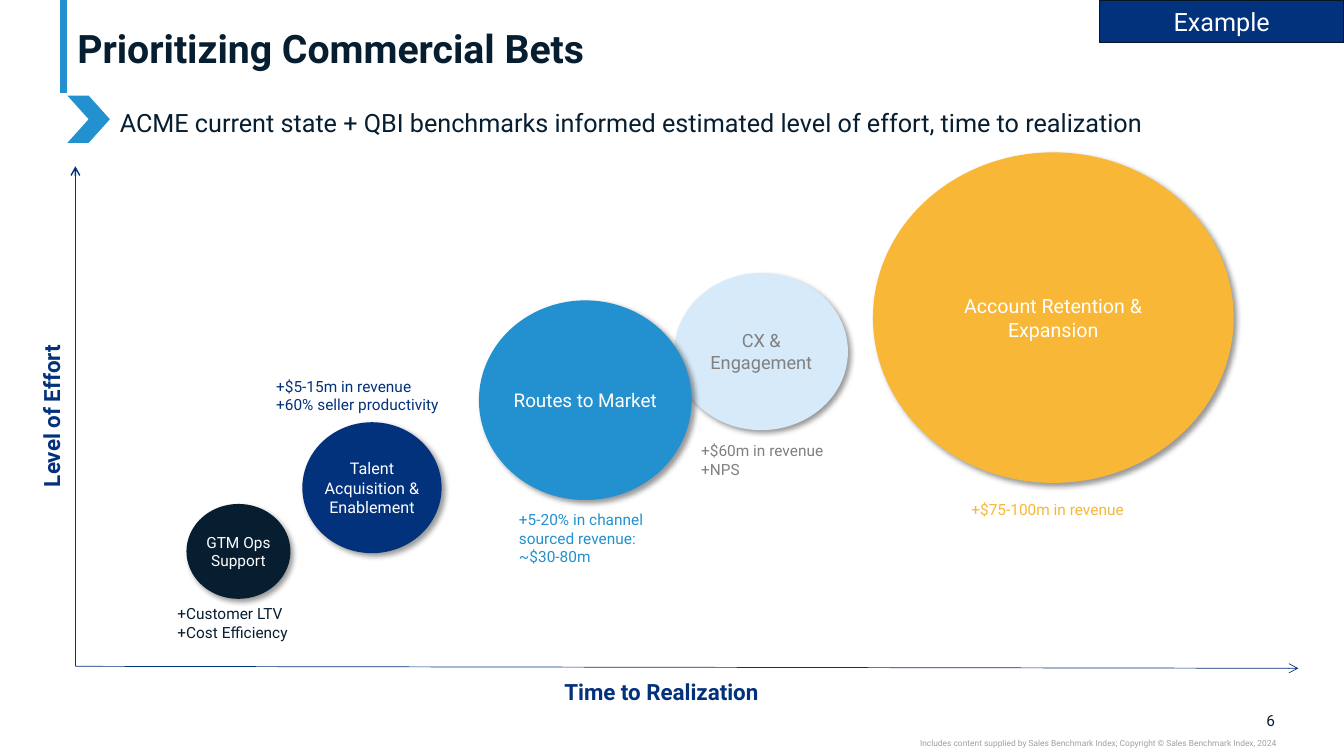
"""Build a slide that plots commercial bets by effort and time to realization."""
from lxml.etree import SubElement
from pptx import Presentation
from pptx.dml.color import RGBColor
from pptx.enum.shapes import MSO_CONNECTOR, MSO_SHAPE
from pptx.enum.text import MSO_ANCHOR, PP_ALIGN
from pptx.oxml.ns import qn
from pptx.util import Cm, Pt

FONT = "Roboto"
COLORS = {
    "ink": "071E31", "navy": "03327C", "blue": "2391CF", "pale": "D7EAF9",
    "amber": "F8B737", "gray": "808080", "light_gray": "A0A0A0",
    "edge": "051624", "white": "FFFFFF", "black": "000000",
}
BETS = [
    ("GTM Ops Support", (4.7, 12.7, 2.62, 2.39), "ink", "white", 11,
     "+Customer LTV\n+Cost Efficiency", (4.22, 15.11, 5.44, 1.19), "ink"),
    ("Talent Acquisition & Enablement", (7.62, 10.64, 3.51, 3.3), "navy", "white", 11.5,
     "+$5-15m in revenue\n+60% seller productivity", (6.71, 9.37, 5.13, 1.19), "navy"),
    ("CX & Engagement", (17, 6.88, 4.37, 3.96), "pale", "gray", 13,
     "+$60m in revenue\n+NPS", (17.42, 11, 4.37, 1.19), "gray"),
    ("Routes to Market", (12.07, 7.57, 5.36, 5.03), "blue", "white", 13.5,
     "+5-20% in channel sourced revenue: ~$30-80m", (12.83, 12.73, 4.37, 1.68), "blue"),
    ("Account Retention & Expansion", (22, 3.84, 9.09, 8.33), "amber", "white", 14,
     "+$75-100m in revenue", (24.23, 12.47, 4.72, 0.74), "amber"),
]


def color(name):
    """Return the named colour."""
    return RGBColor.from_string(COLORS[name])


def lengths(numbers):
    """Turn plain numbers into centimetre lengths."""
    return [Cm(number) for number in numbers]


def write(shape, text, size, ink, align=PP_ALIGN.LEFT, bold=False, anchor=MSO_ANCHOR.TOP, inset=True):
    """Put formatted text into a shape."""
    frame = shape.text_frame
    frame.word_wrap = True
    frame.vertical_anchor = anchor
    if not inset:
        frame.margin_left = frame.margin_right = frame.margin_top = frame.margin_bottom = 0
    frame.text = text
    for para in frame.paragraphs:
        para.alignment = align
        for span in para.runs:
            span.font.name = FONT
            span.font.size = Pt(size)
            span.font.bold = bold
            span.font.color.rgb = color(ink)


def add_text(page, place, text, size, ink, **style):
    """Add a text box."""
    box = page.shapes.add_textbox(*lengths(place))
    write(box, text, size, ink, **style)
    return box


def add_block(page, kind, place, fill):
    """Add a plain filled shape without outline or shadow."""
    block = page.shapes.add_shape(kind, *lengths(place))
    block.shadow.inherit = False
    block.fill.solid()
    block.fill.fore_color.rgb = color(fill)
    block.line.fill.background()
    return block


def add_shadow(shape):
    """Give a shape a soft shadow to the lower right."""
    effects = shape._element.spPr.find(qn("a:effectLst"))
    shadow = SubElement(effects, qn("a:outerShdw"), blurRad=str(Pt(4)), dist=str(Pt(3)),
                        dir=str(45 * 60000), algn="tl", rotWithShape="0")
    tone = SubElement(shadow, qn("a:srgbClr"), val=COLORS["black"])
    SubElement(tone, qn("a:alpha"), val="40000")


def add_line(page, ends, ink, width, arrow=False):
    """Add a straight line, with an arrowhead at its end if asked."""
    line = page.shapes.add_connector(MSO_CONNECTOR.STRAIGHT, *lengths(ends))
    line.line.color.rgb = color(ink)
    line.line.width = Pt(width)
    if arrow:
        SubElement(line.line._get_or_add_ln(), qn("a:tailEnd"), type="arrow")
    SubElement(line._element.spPr, qn("a:effectLst"))


def add_bet(page, name, place, fill, ink, size, note, note_place, note_ink):
    """Add a bubble and the note on its benefit."""
    bubble = add_block(page, MSO_SHAPE.OVAL, place, fill)
    add_shadow(bubble)
    write(bubble, name, size, ink, align=PP_ALIGN.CENTER, anchor=MSO_ANCHOR.MIDDLE, inset=False)
    add_text(page, note_place, note, 11, note_ink)


def add_header(page):
    """Add the title, the subtitle and their decoration."""
    add_line(page, (1.6, 0, 1.6, 2.34), "blue", 5)
    title = add_text(page, (1.7, 0.64, 30.45, 1.17), "Prioritizing Commercial Bets", 28, "ink",
                     bold=True, anchor=MSO_ANCHOR.BOTTOM)
    title.text_frame.margin_top = title.text_frame.margin_bottom = 0
    title.text_frame.paragraphs[0].line_spacing = 0.9
    tag = add_block(page, MSO_SHAPE.RECTANGLE, (27.71, 0, 6.16, 1.07), "navy")
    tag.line.color.rgb = color("edge")
    tag.line.width = Pt(1)
    write(tag, "Example", 18, "white", align=PP_ALIGN.CENTER, anchor=MSO_ANCHOR.MIDDLE)
    add_block(page, MSO_SHAPE.CHEVRON, (1.7, 2.41, 1.07, 1.19), "blue")
    add_text(page, (2.77, 2.57, 26.82, 1.02),
             "ACME current state + QBI benchmarks informed estimated level of effort, time to realization",
             18, "ink")


def add_axes(page):
    """Add both axes with their labels."""
    add_line(page, (1.9, 16.79, 1.9, 4.19), "navy", 1, arrow=True)
    add_line(page, (1.9, 16.79, 32.72, 16.84), "navy", 0.5, arrow=True)
    label = {"align": PP_ALIGN.CENTER, "bold": True}
    add_text(page, (13.51, 16.97, 6.32, 0.94), "Time to Realization", 16, "navy", **label)
    effort = add_text(page, (-1.37, 10.01, 5.33, 0.94), "Level of Effort", 16, "navy", **label)
    effort.rotation = 270


def add_footer(page):
    """Add the page number and the copyright line."""
    add_text(page, (31.29, 17.91, 0.84, 0.48), "6", 11, "ink",
             align=PP_ALIGN.RIGHT, anchor=MSO_ANCHOR.MIDDLE, inset=False)
    add_text(page, (19.05, 18.59, 13.11, 0.25),
             "Includes content supplied by Sales Benchmark Index; Copyright © Sales Benchmark Index, 2024",
             6, "light_gray", align=PP_ALIGN.RIGHT, inset=False)


def main():
    """Build and save the deck."""
    deck = Presentation()
    deck.slide_width, deck.slide_height = Cm(33.87), Cm(19.05)
    page = deck.slides.add_slide(deck.slide_layouts[6])
    add_header(page)
    for bet in BETS:
        add_bet(page, *bet)
    add_axes(page)
    add_footer(page)
    deck.save("out.pptx")


if __name__ == "__main__":
    main()
